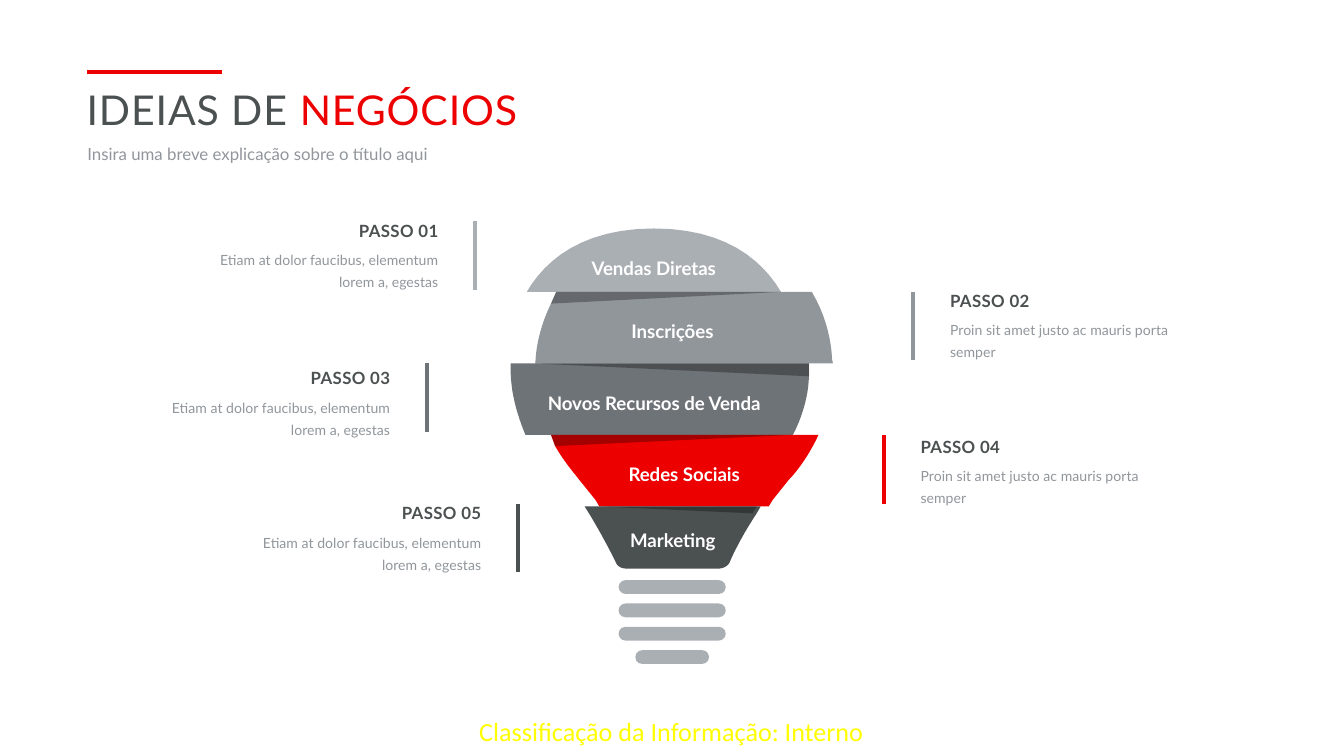
"""Build the business ideas slide: a sliced light bulb with five steps."""
from lxml.etree import SubElement as Sub
from pptx import Presentation as Deck
from pptx.dml.color import RGBColor as RGB
from pptx.enum.shapes import MSO_CONNECTOR as LINK, MSO_SHAPE as FORM
from pptx.enum.text import MSO_ANCHOR as ANCHOR, MSO_AUTO_SIZE as AUTO, PP_ALIGN as ALIGN
from pptx.oxml.ns import qn
from pptx.util import Pt

RED = RGB(0xEC, 0x00, 0x00)
DARK = RGB(0x4B, 0x50, 0x50)
SLATE = RGB(0x6E, 0x73, 0x78)
GRAY = RGB(0x91, 0x96, 0x9B)
PALE = RGB(0xAA, 0xAF, 0xB4)
WHITE = RGB(0xFF, 0xFF, 0xFF)
BLACK = RGB(0x00, 0x00, 0x00)
YELLOW = RGB(0xFF, 0xFF, 0x00)


def write(box, place, text, size, color, align=ALIGN.LEFT, bold=False, gap=None, track=0, face="Lato"):
    box.left, box.top, box.width, box.height = [Pt(n) for n in place]
    frame = box.text_frame
    frame.margin_left = frame.margin_top = frame.margin_right = frame.margin_bottom = 0
    frame.word_wrap, frame.auto_size = True, AUTO.NONE
    frame.vertical_anchor = ANCHOR.TOP
    frame.text = text
    para = frame.paragraphs[0]
    para.alignment, para.space_before = align, Pt(0)
    if gap:
        para.line_spacing = gap
    run = para.runs[0]
    run.font.name, run.font.size, run.font.bold = face, Pt(size), bold
    run.font.color.rgb = color
    if track:
        run.font._element.set("spc", str(track))
    return para


def draw(path, color):
    dots = [path[0]]
    for step in path[1:]:
        if len(step) == 2:
            dots.append(step)
            continue
        a, b, c, d = dots[-1], step[:2], step[2:4], step[4:]
        for i in range(1, 13):
            t = i / 12
            u = 1 - t
            dots.append([u**3 * a[k] + 3 * u * u * t * b[k] + 3 * u * t * t * c[k] + t**3 * d[k] for k in (0, 1)])
    pen = shapes.build_freeform(Pt(dots[0][0]), Pt(dots[0][1]))
    pen.add_line_segments([(Pt(x), Pt(y)) for x, y in dots[1:]], close=True)
    form = pen.convert_to_shape()
    form.shadow.inherit = False
    form.fill.solid()
    form.fill.fore_color.rgb = color
    form.line.fill.background()
    return form


deck = Deck()
deck.slide_width, deck.slide_height = Pt(720), Pt(405)
slide = deck.slides.add_slide(deck.slide_layouts[0])
shapes = slide.shapes

para = write(shapes.title, (46.4, 45.4, 626, 30), "IDEIAS DE ", 22, DARK, track=50)
run = para.add_run()
run.text = "NEGÓCIOS"
run.font.name, run.font.size, run.font.bold = "Lato", Pt(22), False
run.font.color.rgb = RED
run.font._element.set("spc", "50")
write(slide.placeholders[1], (46.8, 75.6, 626, 11), "Insira uma breve explicação sobre o título aqui", 9, GRAY, gap=Pt(12))
foot = shapes.add_textbox(0, 0, 0, 0)
write(foot, (240.5, 378.7, 238.3, 26), "Classificação da Informação: Interno", 14, YELLOW, ALIGN.CENTER, face="Calibri")
foot.text_frame.vertical_anchor = ANCHOR.MIDDLE

Y1, Y2, Y3, Y4 = [156.4 + 38.3 * i for i in range(4)]
bands = [
    (PALE, [(418.4, Y1), (282.2, Y1), (292.3, 139, 312.5, 122.4, 350.4, 122.4),
            (388.1, 122.4, 408.2, 139, 418.4, Y1)]),
    (GRAY, [(446.2, Y2), (286.7, Y2), (287, 192.2), (287, 192.2, 287.3, 178.6, 295.2, 162.7),
            (298, Y1), (434.9, Y1), (445.7, 174.2, 445.7, 192.2, 445.7, 192.2)]),
    (SLATE, [(433.4, 201.6), (433, 213.8, 429.1, 224.6, 424.8, Y3), (281.5, Y3),
             (277.2, 222.5, 273, 209.5, 273.6, Y2), (433.4, Y2)]),
    (RED, [(438.5, Y3), (432.7, 245.5, 425.5, 254.2, 422.6, 257), (414, 267.8), (411.8, Y4),
           (321.1, Y4), (319, 267.8), (310.3, 257), (308.2, 254.2, 302.4, 247.7, 297.4, 239), (295.2, Y3)]),
    (DARK, [(407.5, Y4), (405.4, 275), (398.2, 285.8, 393.1, 295.9, 391, 301),
            (390.2, 303.1, 387.4, 304.6, 385.2, 304.6), (335.5, 304.6),
            (332.6, 304.6, 330.5, 303.1, 329.8, 301), (326.9, 295.2, 321.1, 283.7, 313.2, Y4)]),
]
for color, path in bands:
    draw(path, color)

shades = [
    [(418.4, Y1), (295.2, 162.7), (298, Y1)],
    [(433.4, 201.6), (286.6, Y2), (433.4, Y2)],
    [(424.8, Y3), (297.4, 239), (295.2, Y3)],
    [(405.4, Y4), (403.2, 275), (321.1, Y4)],
]
for path in shades:
    tint = draw(path, BLACK).fill._xPr.find(qn("a:solidFill"))[0]
    Sub(tint, qn("a:alpha")).set("val", "30000")

for i, wide in enumerate((57.4, 57.4, 57.4, 39.5)):
    ring = shapes.add_shape(FORM.ROUNDED_RECTANGLE, Pt(360.1 - wide / 2), Pt(310.8 + 12.5 * i), Pt(wide), Pt(7.4))
    ring.adjustments[0] = 0.5
    ring.shadow.inherit = False
    ring.fill.solid()
    ring.fill.fore_color.rgb = PALE
    ring.line.fill.background()

labels = [
    ("Vendas Diretas", 350.2, 135.4), ("Inscrições", 360.2, 169.2), ("Novos Recursos de Venda", 350.4, 207.4),
    ("Redes Sociais", 366.5, 245.5), ("Marketing", 360.4, 280.8),
]
for text, mid, top in labels:
    write(shapes.add_textbox(0, 0, 0, 0), (mid - 66, top, 132, 13), text, 10, WHITE, ALIGN.CENTER, True, 1.2)

LEFT = "Etiam at dolor faucibus, elementum lorem a, egestas"
RIGHT = "Proin sit amet justo ac mauris porta semper"
steps = [
    (117.4, 118.1, LEFT, ALIGN.RIGHT), (509, 155.5, RIGHT, ALIGN.LEFT), (91.6, 197.2, LEFT, ALIGN.RIGHT),
    (493.2, 233.9, RIGHT, ALIGN.LEFT), (140.4, 269.5, LEFT, ALIGN.RIGHT),
]
for i, (left, top, text, align) in enumerate(steps, 1):
    write(shapes.add_textbox(0, 0, 0, 0), (left, top, 117.4, 11), f"PASSO 0{i}", 9, DARK, align, True, track=20)
    write(shapes.add_textbox(0, 0, 0, 0), (left, top + 14, 117.4, 22.3), text, 7.5, GRAY, align, gap=1.3)

rules = [
    (46.8, 38.6, 118.8, 38.6, RED), (254.4, 118.6, 254.4, 155.4, PALE), (489.1, 156.4, 489.1, 193, GRAY),
    (228.8, 194.6, 228.8, 231.4, SLATE), (473.8, 233.1, 473.8, 270, RED), (277.3, 270, 277.3, 306.6, DARK),
]
for *ends, color in rules:
    rule = shapes.add_connector(LINK.STRAIGHT, *[Pt(n) for n in ends])
    rule.line.color.rgb, rule.line.width = color, Pt(2.25)
    Sub(rule._element.spPr, qn("a:effectLst"))

deck.save("out.pptx")
